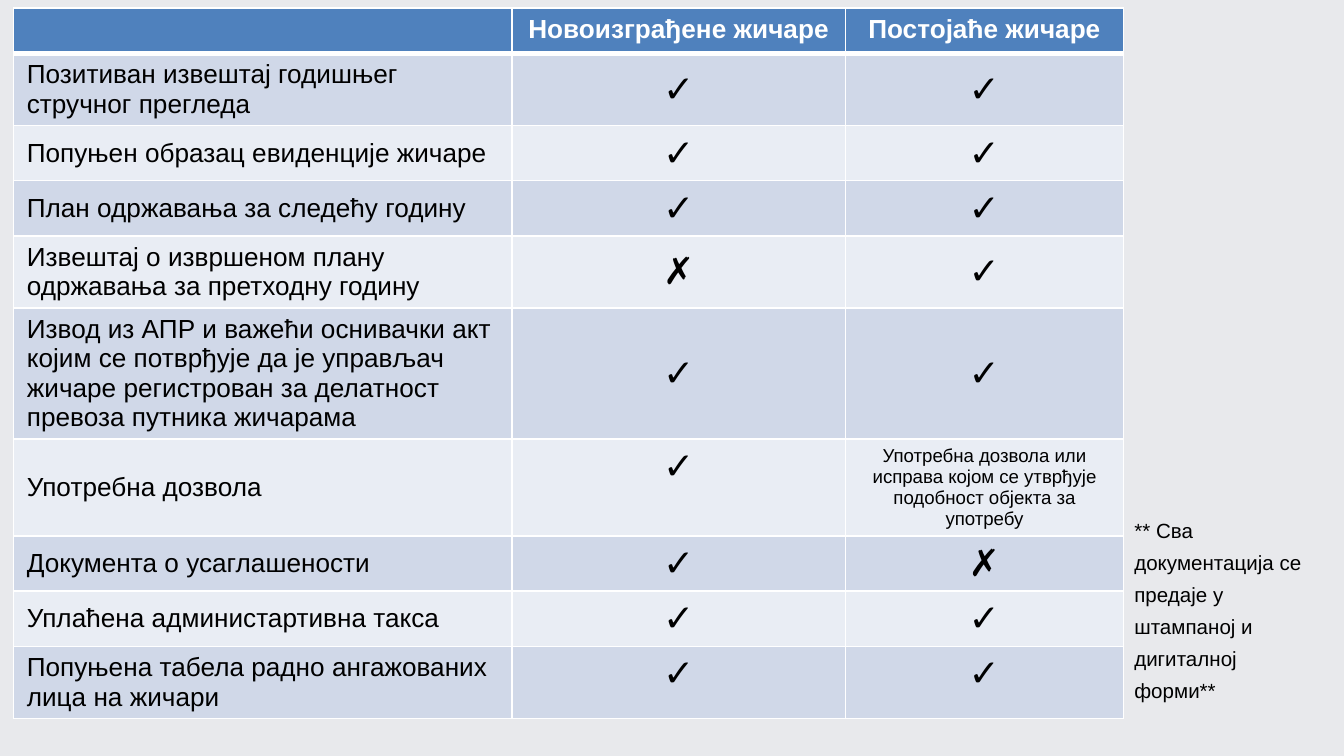
from typing import NamedTuple

from lxml import etree
from pptx import Presentation
from pptx import util as u
from pptx.dml.color import RGBColor
from pptx.enum import text
from pptx.oxml.ns import qn

COLORS = {
    "background": "E8E9EC",
    "header": "4F81BD",
    "band_dark": "D0D8E8",
    "band_light": "E9EDF4",
    "white": "FFFFFF",
    "black": "000000",
}
FONT = "Arial"
YES, NO = "✓", "✗"
COLUMN_WIDTHS = (267.12, 178.56, 149.04)
HEADINGS = ("", "Новоизграђене жичаре", "Постојаће жичаре")
HEADER_HEIGHT = 23.3
LINE, TWO_LINES = 29.5, 38.6  # row heights


class Requirement(NamedTuple):
    name: str
    new_lift: str
    old_lift: str
    height: float
    marks_on_top: bool = False


REQUIREMENTS = (
    Requirement("Позитиван извештај годишњег стручног прегледа", YES, YES, TWO_LINES),
    Requirement("Попуњен образац евиденције жичаре", YES, YES, LINE),
    Requirement("План одржавања за следећу годину", YES, YES, LINE),
    Requirement("Извештај о извршеном плану одржавања за претходну годину", NO, YES, TWO_LINES),
    Requirement("Извод из АПР и важећи оснивачки акт којим се потврђује да је управљач "
                "жичаре регистрован за делатност превоза путника жичарама", YES, YES, 70.2),
    Requirement("Употребна дозвола", YES,
                "Употребна дозвола или исправа којом се утврђује подобност објекта за употребу",
                52, True),
    Requirement("Документа о усаглашености", YES, NO, LINE),
    Requirement("Уплаћена администартивна такса", YES, YES, LINE),
    Requirement("Попуњена табела радно ангажованих лица на жичари", YES, YES, TWO_LINES, True),
)


def rgb(name: str) -> RGBColor:
    return RGBColor.from_string(COLORS[name])


def add_run(p, words: str, size: float, color: str = "black", bold: bool = False) -> None:
    r = p.add_run()
    r.text = words
    r.font.name, r.font.size, r.font.bold = FONT, u.Pt(size), bold
    r.font.color.rgb = rgb(color)


def set_borders(cell, bottom: float = 1, top: float = 1) -> None:
    tc_pr = cell._tc.get_or_add_tcPr()
    widths = {"a:lnL": 1, "a:lnR": 1, "a:lnT": top, "a:lnB": bottom}
    for i, (tag, width) in enumerate(widths.items()):
        ln = etree.Element(qn(tag), w=str(u.Pt(width)))
        fill = etree.SubElement(ln, qn("a:solidFill"))
        etree.SubElement(fill, qn("a:srgbClr"), val=COLORS["white"])
        tc_pr.insert(i, ln)


def fill_cell(cell, words: str, size: float, fill: str, centred: bool,
              middle: bool = True, header: bool = False, top: float = 1) -> None:
    cell.fill.solid()
    cell.fill.fore_color.rgb = rgb(fill)
    set_borders(cell, bottom=3 if header else 1, top=top)
    cell.vertical_anchor = text.MSO_ANCHOR.MIDDLE if middle else text.MSO_ANCHOR.TOP
    p = cell.text_frame.paragraphs[0]
    if words:
        p.alignment = text.PP_ALIGN.CENTER if centred else text.PP_ALIGN.LEFT
        add_run(p, words, size, "white" if header else "black", header)
    else:  # keeps the empty cell as low as its neighbours
        etree.SubElement(p._p, qn("a:endParaRPr"), sz=str(size * 100))


def add_requirements(s) -> None:
    height = HEADER_HEIGHT + sum(item.height for item in REQUIREMENTS)
    table = s.shapes.add_table(len(REQUIREMENTS) + 1, len(COLUMN_WIDTHS), u.Pt(7.2), u.Pt(4.3),
                               u.Pt(sum(COLUMN_WIDTHS)), u.Pt(height)).table
    for column, width in zip(table.columns, COLUMN_WIDTHS):
        column.width = u.Pt(width)

    # Header row
    table.rows[0].height = u.Pt(HEADER_HEIGHT)
    for col, heading in enumerate(HEADINGS):
        fill_cell(table.cell(0, col), heading, 14, "header", True, middle=False, header=True)

    # Banded body rows
    for row, item in enumerate(REQUIREMENTS, start=1):
        table.rows[row].height = u.Pt(item.height)
        band = "band_dark" if row % 2 else "band_light"
        top = 3 if row == 1 else 1
        fill_cell(table.cell(row, 0), item.name, 14, band, False, top=top)
        for col, mark in enumerate((item.new_lift, item.old_lift), start=1):
            size = 20 if mark in (YES, NO) else 10
            fill_cell(table.cell(row, col), mark, size, band, True,
                      middle=not item.marks_on_top, top=top)


def add_note(s) -> None:
    tf = s.shapes.add_textbox(u.Pt(607.7), u.Pt(273.6), u.Pt(97.9), u.Pt(103.7)).text_frame
    tf.word_wrap = True
    tf.auto_size = text.MSO_AUTO_SIZE.SHAPE_TO_FIT_TEXT
    tf.margin_left = tf.margin_right = tf.margin_top = tf.margin_bottom = 0
    p = tf.paragraphs[0]
    p.line_spacing = 1.3
    add_run(p, "** Cва документација се предаје у штампаној и дигиталној форми**", 11)


def main() -> None:
    prs = Presentation()
    prs.slide_width, prs.slide_height = u.Pt(720), u.Pt(405)
    s = prs.slides.add_slide(prs.slide_layouts[6])
    s.background.fill.solid()
    s.background.fill.fore_color.rgb = rgb("background")
    add_requirements(s)
    add_note(s)
    prs.save("out.pptx")


if __name__ == "__main__":
    main()
